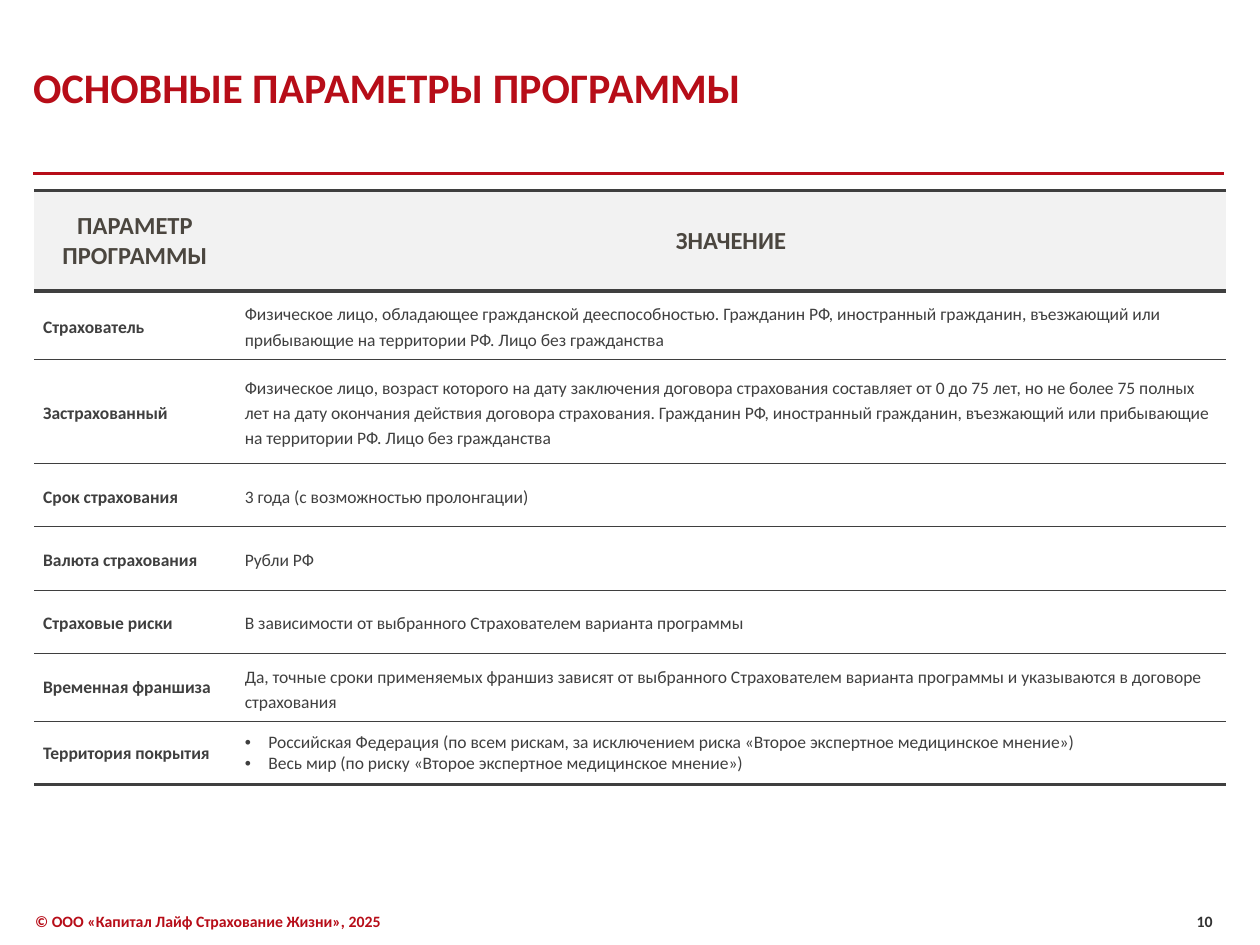
from lxml import etree
from pptx import Presentation
from pptx.dml.color import RGBColor
from pptx.enum.shapes import MSO_CONNECTOR
from pptx.enum.text import MSO_ANCHOR, PP_ALIGN
from pptx.oxml.ns import qn
from pptx.util import Pt

LEFT, CENTER, RIGHT = PP_ALIGN.LEFT, PP_ALIGN.CENTER, PP_ALIGN.RIGHT
MIDDLE = MSO_ANCHOR.MIDDLE
STRAIGHT = MSO_CONNECTOR.STRAIGHT

COLORS = {
    "red": "B70D18",
    "ink": "3F3F3F",
    "header": "4B463F",
    "header_fill": "F2F2F2",
    "number": "323232",
}
THIN, THICK = 0.75, 2.25
INDENT = 13.5

HEADERS = ["ПАРАМЕТР ПРОГРАММЫ", "ЗНАЧЕНИЕ"]
# label, value paragraphs, row height, label line spacing, value line spacing
ROWS = [
    ("Страхователь",
     ["Физическое лицо, обладающее гражданской дееспособностью. Гражданин РФ, "
      "иностранный гражданин, въезжающий или прибывающие на территории РФ. "
      "Лицо без гражданства"], 39, 1.2, 1.2),
    ("Застрахованный",
     ["Физическое лицо, возраст которого на дату заключения договора страхования "
      "составляет от 0 до 75 лет, но не более 75 полных лет на дату окончания "
      "действия договора страхования. Гражданин РФ, иностранный гражданин, "
      "въезжающий или прибывающие на территории РФ. Лицо без гражданства"],
     59.5, 1.2, 1.2),
    ("Срок страхования", ["3 года (с возможностью пролонгации)"], 36.2, 1.2, 1.2),
    ("Валюта страхования", ["Рубли РФ"], 36.2, 1.2, 1.2),
    ("Страховые риски",
     ["В зависимости от выбранного Страхователем варианта программы"],
     36.2, 1.2, 1.2),
    ("Временная франшиза",
     ["Да, точные сроки применяемых франшиз зависят от выбранного Страхователем "
      "варианта программы и указываются в договоре страхования"], 39, 1, 1.2),
    ("Территория покрытия",
     ["Российская Федерация (по всем рискам, за исключением риска "
      "«Второе экспертное медицинское мнение»)",
      "Весь мир (по риску «Второе экспертное медицинское мнение»)"], 36, 1, 1),
]


class SlideBuilder:
    def __init__(self, slide, font="Calibri"):
        self.slide = slide
        self.font = font

    def run(self, p, text, size, color, bold=False):
        r = p.add_run()
        r.text = text
        r.font.name = self.font
        r.font.size = Pt(size)
        r.font.bold = bold
        r.font.color.rgb = RGBColor.from_string(COLORS[color])

    def title(self, text, x, y, w, h):
        sp = self.slide.shapes.title
        sp.left, sp.top, sp.width, sp.height = Pt(x), Pt(y), Pt(w), Pt(h)
        tf = sp.text_frame
        tf.margin_left = tf.margin_right = tf.margin_top = tf.margin_bottom = 0
        tf.vertical_anchor = MIDDLE
        p = tf.paragraphs[0]
        p.alignment = LEFT
        self.run(p, text, 24, "red", bold=True)

    def rule(self, x1, x2, y):
        line = self.slide.shapes.add_connector(STRAIGHT, Pt(x1), Pt(y), Pt(x2), Pt(y))
        line.line.color.rgb = RGBColor.from_string(COLORS["red"])
        line.line.width = Pt(1.5)
        etree.SubElement(line.element.spPr, qn("a:effectLst"))

    def footer(self, text, x, y, w, h, color, align):
        tf = self.slide.shapes.add_textbox(Pt(x), Pt(y), Pt(w), Pt(h)).text_frame
        tf.word_wrap = True
        p = tf.paragraphs[0]
        p.alignment = align
        self.run(p, text, 9, color, bold=True)

    def borders(self, cell, top, bottom):
        """Rule the cell above and below, leaving its sides open."""
        tc_pr = cell._tc.get_or_add_tcPr()
        for side, width in (("L", 0), ("R", 0), ("T", top), ("B", bottom)):
            ln = etree.SubElement(tc_pr, qn(f"a:ln{side}"), w=str(Pt(width)))
            if width:
                fill = etree.SubElement(ln, qn("a:solidFill"))
                etree.SubElement(fill, qn("a:srgbClr"), val=COLORS["ink"])
            else:
                etree.SubElement(ln, qn("a:noFill"))

    def bullet(self, p):
        p_pr = p._p.get_or_add_pPr()
        p_pr.set("marL", str(Pt(INDENT)))
        p_pr.set("indent", str(-Pt(INDENT)))
        etree.SubElement(p_pr, qn("a:buFont"), typeface="Arial")
        etree.SubElement(p_pr, qn("a:buChar"), char="•")

    def header_cell(self, cell, text):
        self.borders(cell, THICK, THICK)
        cell.fill.solid()
        cell.fill.fore_color.rgb = RGBColor.from_string(COLORS["header_fill"])
        cell.vertical_anchor = MIDDLE
        p = cell.text_frame.paragraphs[0]
        p.alignment = CENTER
        self.run(p, text, 14, "header", bold=True)

    def body_cell(self, cell, lines, spacing, bold, top, bottom):
        self.borders(cell, top, bottom)
        cell.fill.background()
        cell.vertical_anchor = MIDDLE
        cell.margin_left = cell.margin_right = Pt(5.2)
        cell.margin_top = cell.margin_bottom = 0
        tf = cell.text_frame
        for i, text in enumerate(lines):
            p = tf.add_paragraph() if i else tf.paragraphs[0]
            p.line_spacing = spacing
            if len(lines) > 1:
                self.bullet(p)
            self.run(p, text, 10, "ink", bold)

    def table(self, x, y, widths, header_height):
        heights = [header_height] + [row[2] for row in ROWS]
        table = self.slide.shapes.add_table(
            len(heights), len(widths), Pt(x), Pt(y),
            Pt(sum(widths)), Pt(sum(heights))).table
        table.first_row = table.horz_banding = False
        for column, width in zip(table.columns, widths):
            column.width = Pt(width)
        for row, height in zip(table.rows, heights):
            row.height = Pt(height)
        for i, text in enumerate(HEADERS):
            self.header_cell(table.cell(0, i), text)
        for i, (label, lines, _, label_ls, value_ls) in enumerate(ROWS, 1):
            top = THICK if i == 1 else THIN
            bottom = THICK if i == len(ROWS) else THIN
            self.body_cell(table.cell(i, 0), [label], label_ls, True, top, bottom)
            self.body_cell(table.cell(i, 1), lines, value_ls, False, top, bottom)


def main():
    prs = Presentation()
    prs.slide_width, prs.slide_height = Pt(720), Pt(540)
    s = SlideBuilder(prs.slides.add_slide(prs.slide_layouts[5]))
    s.rule(19, 699.5, 99)
    s.footer("© ООО «Капитал Лайф Страхование Жизни», 2025",
             13, 517.5, 257, 18, "red", LEFT)
    s.title("ОСНОВНЫЕ ПАРАМЕТРЫ ПРОГРАММЫ", 19, 16, 601, 67)
    s.footer("10", 643, 517.5, 57, 18, "number", RIGHT)
    s.table(19.5, 108.8, [115.2, 566], 57.6)
    prs.save("out.pptx")


if __name__ == "__main__":
    main()
